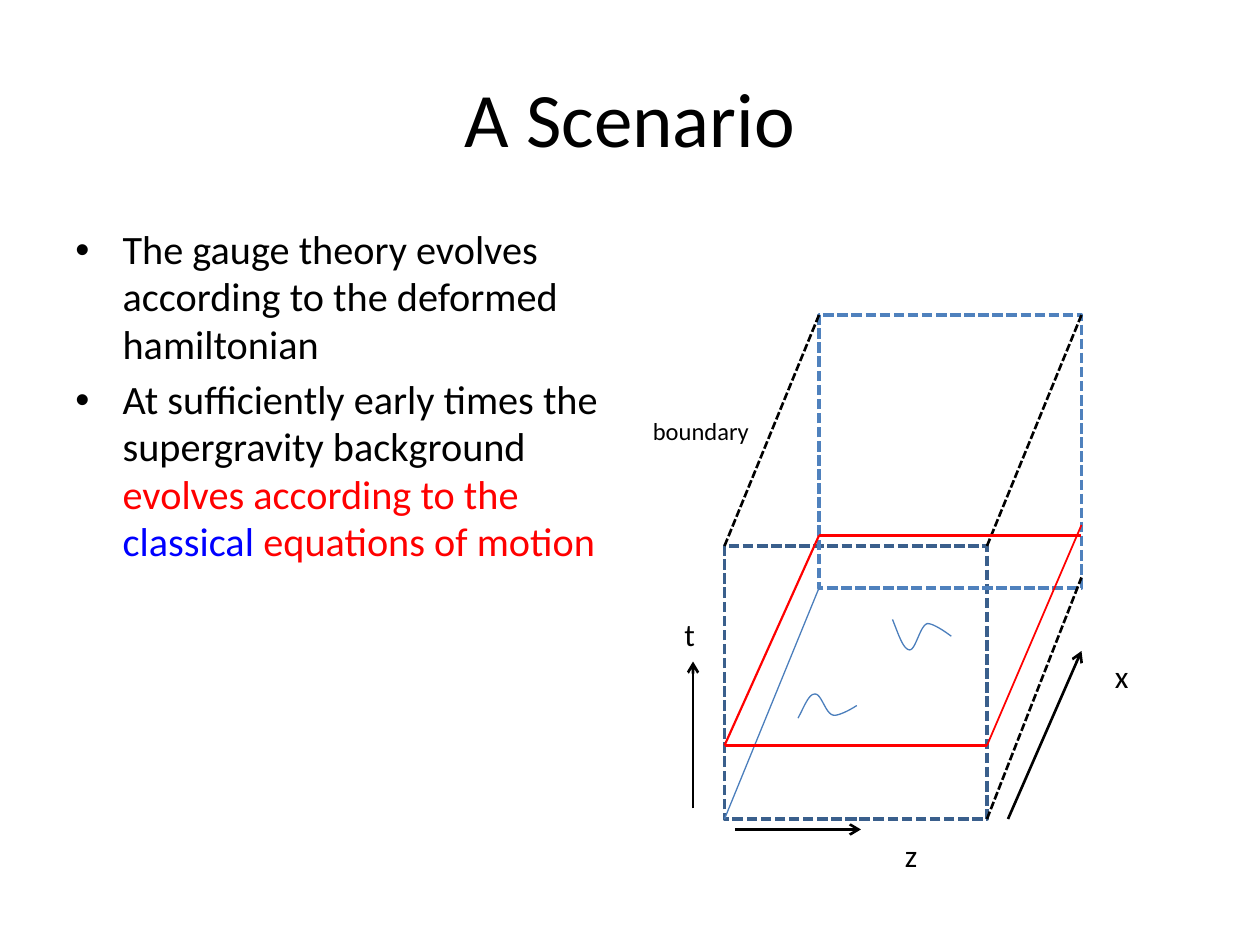
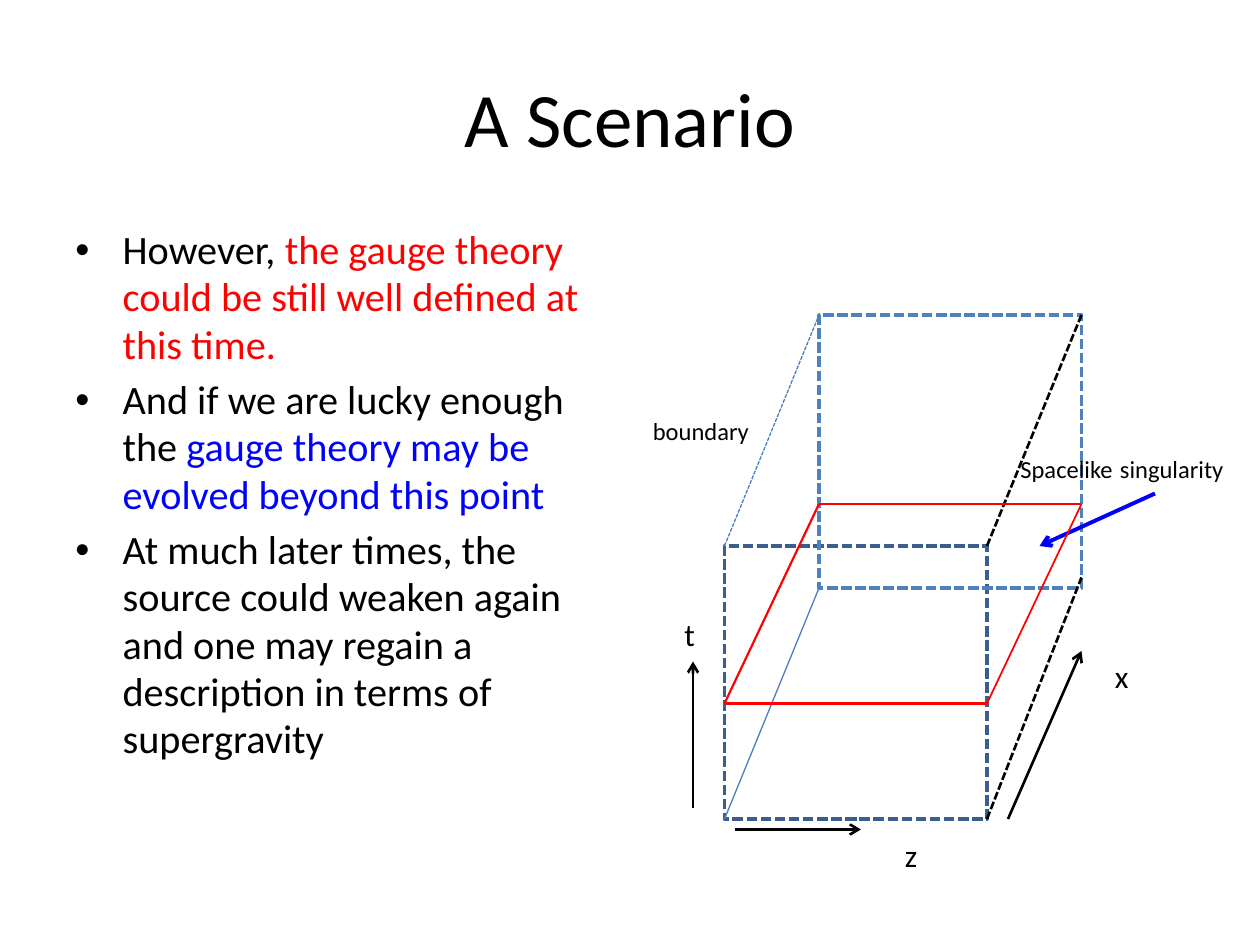
from lxml import etree
from pptx import Presentation
from pptx.dml.color import RGBColor
from pptx.enum.dml import MSO_LINE
from pptx.enum.shapes import MSO_CONNECTOR, MSO_SHAPE
from pptx.enum.text import MSO_ANCHOR, PP_ALIGN
from pptx.oxml.ns import qn
from pptx.util import Inches, Pt

STRAIGHT, RECT = MSO_CONNECTOR.STRAIGHT, MSO_SHAPE.RECTANGLE
DASH = MSO_LINE.SQUARE_DOT
MIDDLE, TOP = MSO_ANCHOR.MIDDLE, MSO_ANCHOR.TOP
CENTER, LEFT = PP_ALIGN.CENTER, PP_ALIGN.LEFT


class Theme:
    font = "Calibri"
    black, red, blue = "000000", "FF0000", "0000FF"
    front, back, thin = "3A5F8C", "4F81BD", "4B7EBC"
    title, body, axis, label = 44, 23, 18, 14
    indent = 0.375


# ---- Content: lengths are in grid cells, twelve to the inch ----
T = Theme
TITLE = "A Scenario"
SLIDES = [
    {
        "bullets": [
            [("The gauge theory evolves according to the deformed hamiltonian", T.black)],
            [("At sufficiently early times the supergravity background ", T.black),
             ("evolves according to the ", T.red),
             ("classical ", T.blue),
             ("equations of motion", T.red)],
        ],
        "top_left_edge": (T.black, 1.5),
        "time_slice": {"front": 71, "back_left": 51, "back_right": 50},
        # start point, then two control points and an end point per curve
        "ripples": [
            [(76, 68.4), (76.6, 67.3), (77, 66.1), (77.6, 66.1), (78.2, 66), (78.6, 67.9),
             (79.3, 68.1), (79.9, 68.3), (81.6, 67.2), (81.6, 67.2)],
            [(85, 59), (85.6, 60.5), (86, 61.8), (86.6, 61.9), (87.2, 62), (87.6, 59.6),
             (88.3, 59.4), (88.9, 59.3), (90.6, 60.6), (90.6, 60.6)],
        ],
    },
    {
        "bullets": [
            [("However, ", T.black),
             ("the gauge theory could be still well defined at this time.", T.red)],
            [("And if we are lucky enough the ", T.black),
             ("gauge theory may be evolved beyond this point", T.blue)],
            [("At much later times, the source could weaken again and one may "
              "regain a description in terms of supergravity", T.black)],
        ],
        "top_left_edge": (T.thin, 0.75),
        "time_slice": {"front": 67, "back_left": 48, "back_right": 48},
        "callout": [("Spacelike", T.label), (" ", T.axis), ("singularity", T.label)],
    },
]
TITLE_BOX = (6, 3.6, 108, 15)
BODY_BOX = (6, 21, 53, 59.4)
CALLOUT_BOX = (96, 42, 24, 4.8)
CALLOUT_ARROW = ((110, 47), (99, 52))

BOX_W, BOX_H = 25, 26
FRONT_X, FRONT_Y = 69, 52
BACK_X, BACK_Y = 78, 30
AXES = [((96, 78), (103, 62)), ((70, 79), (82, 79)), ((66, 77), (66, 63))]
LABELS = [("t", T.axis, (64, 58, 3.2, 4.8)), ("x", T.axis, (105, 62, 4, 4.8)),
          ("z", T.axis, (85, 79, 4, 4.8)), ("boundary", T.label, (61, 39, 12.2, 4.1))]


# ---- Drawing helpers ----
def cells(*values):
    return [Inches(v / 12) for v in values]


def style_line(line, color, width, dashed=False):
    line.color.rgb = RGBColor.from_string(color)
    line.width = Pt(width)
    if dashed:
        line.dash_style = DASH


def add_line(s, start, end, color, width, dashed=False, arrow=False):
    c = s.shapes.add_connector(STRAIGHT, *cells(*start, *end))
    style_line(c.line, color, width, dashed)
    if arrow:
        etree.SubElement(c.line._get_or_add_ln(), qn("a:tailEnd"), type="arrow")
    etree.SubElement(c._element.spPr, qn("a:effectLst"))


def add_text_box(s, box, wrap=True, anchor=TOP):
    tf = s.shapes.add_textbox(*cells(*box)).text_frame
    tf.word_wrap = wrap
    tf.vertical_anchor = anchor
    return tf


def add_runs(p, runs, align=LEFT):
    p.alignment = align
    for text, size, color in runs:
        r = p.add_run()
        r.text = text
        r.font.name = T.font
        r.font.size = Pt(size)
        r.font.color.rgb = RGBColor.from_string(color)


def add_label(s, runs, box):
    p = add_text_box(s, box, wrap=False).paragraphs[0]
    add_runs(p, [(text, size, T.black) for text, size in runs])


def add_bullets(s, bullets):
    tf = add_text_box(s, BODY_BOX)
    for i, parts in enumerate(bullets):
        p = tf.paragraphs[0] if i == 0 else tf.add_paragraph()
        p.space_before = Pt(T.body * 0.2)
        p.line_spacing = 0.98
        add_runs(p, [(text, T.body, color) for text, color in parts])
        pPr = p._p.get_or_add_pPr()
        pPr.set("marL", str(Inches(T.indent)))
        pPr.set("indent", str(-Inches(T.indent)))
        etree.SubElement(pPr, qn("a:buFont"), typeface="Arial")
        etree.SubElement(pPr, qn("a:buChar"), char="•")


def add_ripple(s, points, steps=12):
    outline = [points[0]]
    for i in range(0, len(points) - 1, 3):
        a, b, c, d = points[i:i + 4]
        for t in (n / steps for n in range(1, steps + 1)):
            u = 1 - t
            outline.append([u**3 * a[k] + 3 * u * u * t * b[k] + 3 * u * t * t * c[k]
                            + t**3 * d[k] for k in (0, 1)])
    start, *rest = [cells(*pt) for pt in outline]
    fb = s.shapes.build_freeform(*start, scale=1.0)
    fb.add_line_segments(rest, close=False)
    sp = fb.convert_to_shape()
    sp.shadow.inherit = False
    sp.fill.background()
    style_line(sp.line, T.thin, 0.75)


def add_spacetime_box(s, top_left_edge):
    for x, y, color in ((FRONT_X, FRONT_Y, T.front), (BACK_X, BACK_Y, T.back)):
        sp = s.shapes.add_shape(RECT, *cells(x, y, BOX_W, BOX_H))
        sp.shadow.inherit = False
        sp.fill.background()
        style_line(sp.line, color, 2, dashed=True)
    front_r, back_r = FRONT_X + BOX_W, BACK_X + BOX_W
    front_b, back_b = FRONT_Y + BOX_H, BACK_Y + BOX_H
    add_line(s, (FRONT_X, FRONT_Y), (BACK_X, BACK_Y), *top_left_edge, dashed=True)
    add_line(s, (front_r, FRONT_Y), (back_r, BACK_Y), T.black, 1.5, dashed=True)
    add_line(s, (front_r, front_b), (back_r, back_b - 1), T.black, 1.5, dashed=True)
    add_line(s, (FRONT_X, front_b), (BACK_X, back_b), T.thin, 0.75)


def add_time_slice(s, front, back_left, back_right):
    front_l, front_r = (FRONT_X, front), (FRONT_X + BOX_W, front)
    back_l, back_r = (BACK_X, back_left), (BACK_X + BOX_W, back_right)
    add_line(s, front_l, front_r, T.red, 1.5)
    add_line(s, front_l, back_l, T.red, 1.25)
    add_line(s, back_l, (BACK_X + BOX_W, back_left), T.red, 1.25)
    add_line(s, front_r, back_r, T.red, 1)


# ---- Slides ----
def build_slide(prs, content):
    s = prs.slides.add_slide(prs.slide_layouts[6])
    title = add_text_box(s, TITLE_BOX, anchor=MIDDLE).paragraphs[0]
    add_runs(title, [(TITLE, T.title, T.black)], CENTER)
    add_bullets(s, content["bullets"])
    add_spacetime_box(s, content["top_left_edge"])
    for start, end in AXES:
        add_line(s, start, end, T.black, 1.5, arrow=True)
    for text, size, box in LABELS:
        add_label(s, [(text, size)], box)
    if "callout" in content:
        add_label(s, content["callout"], CALLOUT_BOX)
        add_line(s, *CALLOUT_ARROW, T.blue, 2.25, arrow=True)
    add_time_slice(s, **content["time_slice"])
    for points in content.get("ripples", []):
        add_ripple(s, points)


def main():
    prs = Presentation()
    prs.slide_width, prs.slide_height = Inches(10), Inches(7.5)
    for content in SLIDES:
        build_slide(prs, content)
    prs.save("out.pptx")


if __name__ == "__main__":
    main()
